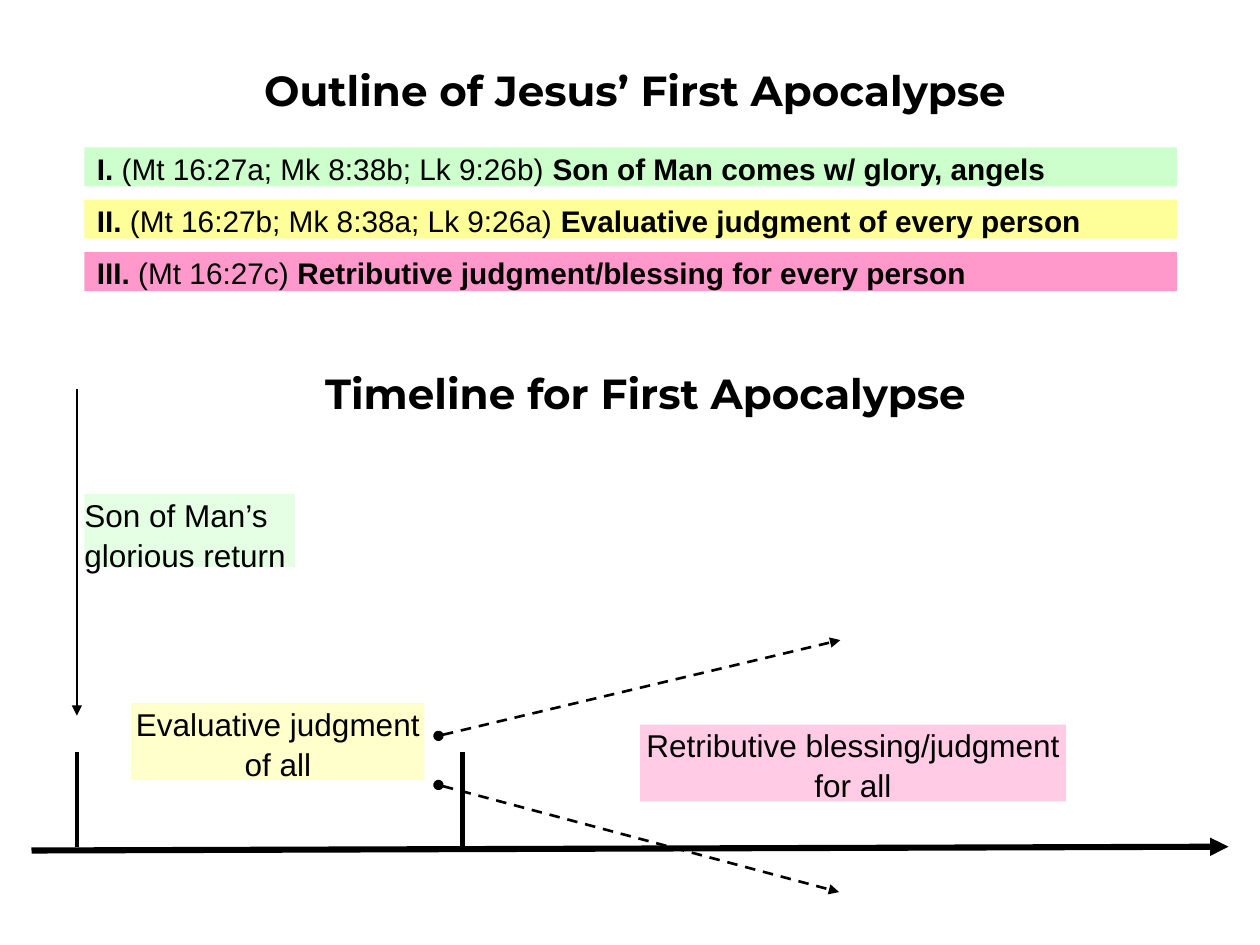
from dataclasses import dataclass
from typing import Optional

from lxml.etree import SubElement
from pptx import Presentation
from pptx.dml.color import RGBColor
from pptx.enum.dml import MSO_LINE_DASH_STYLE as Dash
from pptx.enum.shapes import MSO_CONNECTOR as Connector, MSO_SHAPE as Shape
from pptx.enum.text import MSO_ANCHOR as Anchor, PP_ALIGN as Align
from pptx.oxml.ns import qn
from pptx.util import Inches, Pt

BLACK = RGBColor(0x00, 0x00, 0x00)
GREEN = RGBColor(0xCC, 0xFF, 0xCC)
YELLOW = RGBColor(0xFF, 0xFF, 0x99)
PINK = RGBColor(0xFF, 0x99, 0xCC)

OUTLINE_TOP, OUTLINE_STEP = 1.17, 0.415
RETURN_X, JUDGMENT_X = 0.61, 3.67
TICK_TOP, TICK_BOTTOM = 5.97, 6.72


@dataclass
class OutlineItem:
    numeral: str
    verses: str
    event: str
    color: RGBColor


@dataclass
class Label:
    left: float
    top: float
    width: float
    height: float
    lines: str
    color: RGBColor
    align: Align


@dataclass
class Line:
    start: tuple[float, float]
    end: tuple[float, float]
    weight: float
    head: Optional[str] = None
    tail: Optional[str] = None
    dashed: bool = False


OUTLINE = [
    OutlineItem("I. ", "(Mt 16:27a; Mk 8:38b; Lk 9:26b) ",
                "Son of Man comes w/ glory, angels", GREEN),
    OutlineItem("II. ", "(Mt 16:27b; Mk 8:38a; Lk 9:26a) ",
                "Evaluative judgment of every person", YELLOW),
    OutlineItem("III. ", "(Mt 16:27c) ",
                "Retributive judgment/blessing for every person", PINK),
]
LABELS = [
    Label(1.04, 5.58, 2.33, 0.61, "Evaluative judgment\nof all", YELLOW, Align.CENTER),
    Label(5.08, 5.75, 3.38, 0.61, "Retributive blessing/judgment\nfor all", PINK, Align.CENTER),
    Label(0.67, 3.92, 1.67, 0.58, "Son of Man’s\nglorious return", GREEN, Align.LEFT),
]
LINES = [
    Line((0.25, 6.75), (9.75, 6.72), 3.5, tail="triangle"),
    Line((RETURN_X, TICK_TOP), (RETURN_X, TICK_BOTTOM), 2.5),
    Line((JUDGMENT_X, TICK_TOP), (JUDGMENT_X, TICK_BOTTOM), 2.5),
    Line((RETURN_X, 3.09), (RETURN_X, 5.68), 1.5, tail="triangle"),
    Line((3.48, 6.23), (6.66, 7.08), 1.5, "oval", "triangle", True),
    Line((3.48, 5.84), (6.67, 5.08), 1.5, "oval", "triangle", True),
]


def set_frame(frame, left_inset: float, inset: float) -> None:
    frame.word_wrap = True
    frame.vertical_anchor = Anchor.TOP
    frame.margin_left = Inches(left_inset)
    frame.margin_top = frame.margin_right = frame.margin_bottom = Inches(inset)


def set_font(span, size: float, name: str = "Arial", bold: bool = False) -> None:
    span.font.size, span.font.name, span.font.bold = Pt(size), name, bold
    span.font.color.rgb = BLACK


def add_heading(page, text: str, left: float, top: float, width: float,
                left_inset: float, inset: float) -> None:
    box = page.shapes.add_textbox(Inches(left), Inches(top), Inches(width), Inches(0.42))
    set_frame(box.text_frame, left_inset, inset)
    para = box.text_frame.paragraphs[0]
    para.text = text
    para.alignment = Align.CENTER
    set_font(para.runs[0], 24, "Montserrat", True)


def add_panel(page, left: float, top: float, width: float, height: float, color: RGBColor):
    panel = page.shapes.add_shape(
        Shape.RECTANGLE, Inches(left), Inches(top), Inches(width), Inches(height))
    panel.shadow.inherit = False
    panel.fill.solid()
    panel.fill.fore_color.rgb = color
    panel.line.fill.background()
    return panel


def add_outline_item(page, item: OutlineItem, top: float) -> None:
    panel = add_panel(page, 0.67, top, 8.67, 0.31, item.color)
    set_frame(panel.text_frame, 0.1, 0.01)
    para = panel.text_frame.paragraphs[0]
    para.alignment = Align.LEFT
    para.line_spacing = 1.05
    for text, bold in ((item.numeral, True), (item.verses, False), (item.event, True)):
        span = para.add_run()
        span.text = text
        set_font(span, 17, bold=bold)


def add_label(page, label: Label) -> None:
    """Add a half-transparent timeline label."""
    panel = add_panel(page, label.left, label.top, label.width, label.height, label.color)
    fill_color = panel.fill._xPr.find(qn("a:solidFill"))[0]
    SubElement(fill_color, qn("a:alpha"), val="50000")
    set_frame(panel.text_frame, 0, 0)
    panel.text_frame.text = label.lines
    for para in panel.text_frame.paragraphs:
        para.alignment = label.align
        para.line_spacing = 1.05
        set_font(para.runs[0], 18)


def add_line(page, line: Line) -> None:
    connector = page.shapes.add_connector(
        Connector.STRAIGHT, *(Inches(value) for value in line.start + line.end))
    connector.line.color.rgb = BLACK
    connector.line.width = Pt(line.weight)
    if line.dashed:
        connector.line.dash_style = Dash.DASH
    outline = connector.line._get_or_add_ln()
    for tag, kind in (("a:headEnd", line.head), ("a:tailEnd", line.tail)):
        if kind:
            SubElement(outline, qn(tag), type=kind)
    SubElement(connector._element.spPr, qn("a:effectLst"))


def main() -> None:
    deck = Presentation()
    deck.slide_width, deck.slide_height = Inches(10), Inches(7.5)
    page = deck.slides.add_slide(deck.slide_layouts[6])

    add_heading(page, "Outline of Jesus’ First Apocalypse", 0.83, 0.5, 8.33, 0.1, 0.01)
    for index, item in enumerate(OUTLINE):
        add_outline_item(page, item, OUTLINE_TOP + index * OUTLINE_STEP)

    for label in LABELS:
        add_label(page, label)
    add_heading(page, "Timeline for First Apocalypse ", 0.92, 2.92, 8.5, 0, 0)
    for line in LINES:
        add_line(page, line)

    deck.save("out.pptx")


if __name__ == "__main__":
    main()
